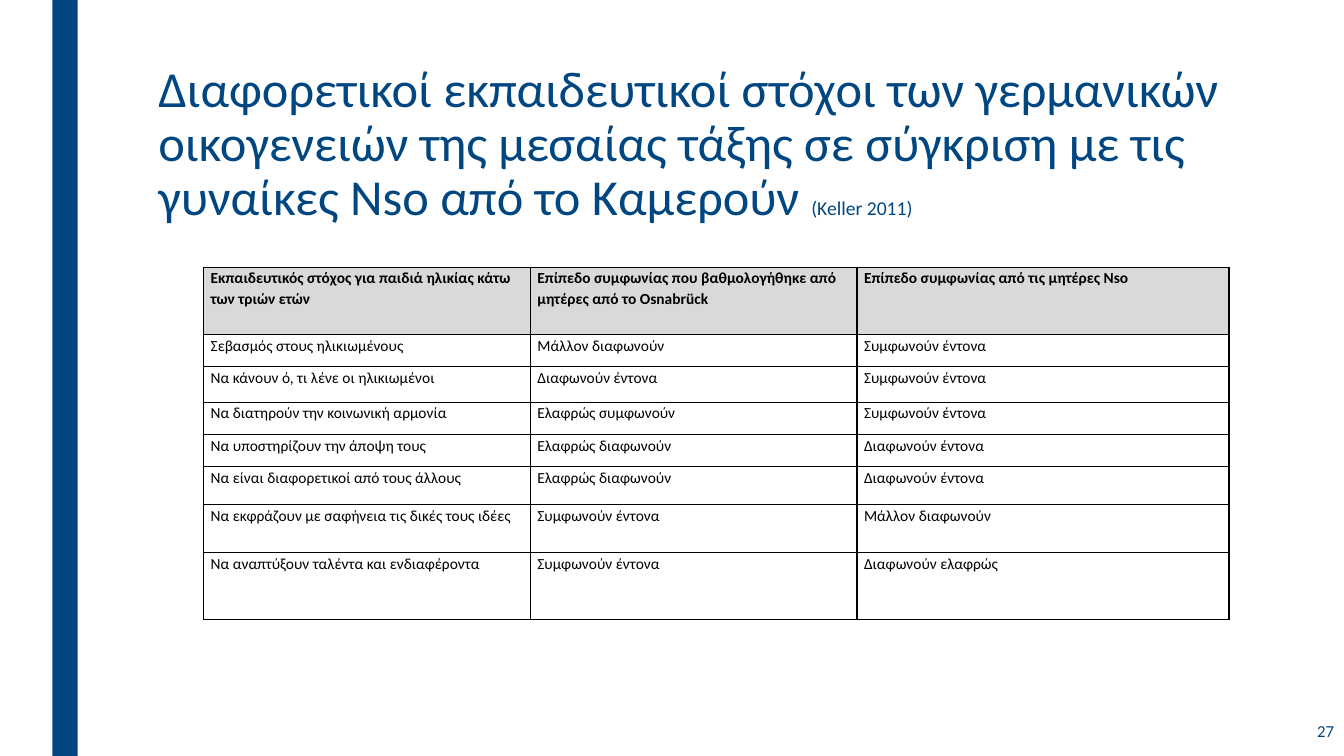
from dataclasses import dataclass

from lxml.etree import SubElement
from pptx import Presentation
from pptx.dml.color import RGBColor
from pptx.enum.shapes import MSO_SHAPE as Shape
from pptx.enum.text import MSO_ANCHOR as Anchor, MSO_AUTO_SIZE as AutoSize, PP_ALIGN as Align
from pptx.oxml.ns import qn
from pptx.util import Inches, Pt


@dataclass(frozen=True)
class Theme:
    font: str = "Calibri"
    blue: str = "004680"
    black: str = "000000"
    header_fill: str = "D9D9D9"
    title_size: int = 36
    source_size: int = 14
    number_size: int = 12
    table_size: int = 11
    table_leading: int = 15


@dataclass(frozen=True)
class Area:
    left: float
    top: float
    width: float
    height: float

    def lengths(self) -> tuple:
        return tuple(Inches(v) for v in (self.left, self.top, self.width, self.height))


@dataclass(frozen=True)
class Goal:
    name: str
    osnabrueck: str
    nso: str
    height: float

    def texts(self) -> tuple:
        return self.name, self.osnabrueck, self.nso


THEME = Theme()
BAR = Area(0.52, 0, 0.25, 7.5)
TITLE = Area(1.47, 0.58, 11.26, 1.73)
TABLE = Area(2.02, 2.65, 10.17, 3.5)
NUMBER = Area(11.58, 7.03, 1.75, 0.44)
COLUMN_WIDTHS = (3.24, 3.24, 3.69)

TITLE_TEXT = ("Διαφορετικοί εκπαιδευτικοί στόχοι των γερμανικών οικογενειών της μεσαίας "
              "τάξης σε σύγκριση με τις γυναίκες Nso από το Καμερούν ")
GOALS = (
    Goal("Εκπαιδευτικός στόχος για παιδιά ηλικίας κάτω των τριών ετών",
         "Επίπεδο συμφωνίας που βαθμολογήθηκε από μητέρες από το Osnabrück",
         "Επίπεδο συμφωνίας από τις μητέρες Nso", 0.67),
    Goal("Σεβασμός στους ηλικιωμένους", "Μάλλον διαφωνούν", "Συμφωνούν έντονα", 0.32),
    Goal("Να κάνουν ό, τι λένε οι ηλικιωμένοι", "Διαφωνούν έντονα", "Συμφωνούν έντονα", 0.35),
    Goal("Να διατηρούν την κοινωνική αρμονία", "Ελαφρώς συμφωνούν", "Συμφωνούν έντονα", 0.32),
    Goal("Να υποστηρίζουν την άποψη τους", "Ελαφρώς διαφωνούν", "Διαφωνούν έντονα", 0.32),
    Goal("Να είναι διαφορετικοί από τους άλλους", "Ελαφρώς διαφωνούν", "Διαφωνούν έντονα", 0.38),
    Goal("Να εκφράζουν με σαφήνεια τις δικές τους ιδέες", "Συμφωνούν έντονα",
         "Μάλλον διαφωνούν", 0.47),
    Goal("Να αναπτύξουν ταλέντα και ενδιαφέροντα", "Συμφωνούν έντονα", "Διαφωνούν ελαφρώς", 0.67),
)


def apply(target, formats: dict) -> None:
    for name, value in formats.items():
        setattr(target, name, value)


def add_span(para, text: str, size: int, color: str, bold: bool = False) -> None:
    span = para.add_run()
    span.text = text
    apply(span.font, {"name": THEME.font, "size": Pt(size), "bold": bold})
    span.font.color.rgb = RGBColor.from_string(color)


def add_bar(page) -> None:
    bar = page.shapes.add_shape(Shape.RECTANGLE, *BAR.lengths())
    bar.shadow.inherit = False
    bar.fill.solid()
    bar.fill.fore_color.rgb = RGBColor.from_string(THEME.blue)
    bar.line.fill.background()


def fill_title(page) -> None:
    box = page.shapes.title
    apply(box, dict(zip(("left", "top", "width", "height"), TITLE.lengths())))
    apply(box.text_frame, {"word_wrap": True, "auto_size": AutoSize.NONE,
                           "vertical_anchor": Anchor.MIDDLE})
    para = box.text_frame.paragraphs[0]
    apply(para, {"alignment": Align.LEFT, "line_spacing": 0.89})
    add_span(para, TITLE_TEXT, THEME.title_size, THEME.blue)
    add_span(para, "(Keller 2011)", THEME.source_size, THEME.blue)


def add_borders(cell) -> None:
    properties = cell._tc.get_or_add_tcPr()
    for side in ("a:lnL", "a:lnR", "a:lnT", "a:lnB"):
        line = SubElement(properties, qn(side), w=str(Pt(1)))
        fill = SubElement(line, qn("a:solidFill"))
        SubElement(fill, qn("a:srgbClr"), val=THEME.black)


def format_cell(cell, text: str, header: bool) -> None:
    add_borders(cell)
    apply(cell, {"margin_left": Inches(0.07), "margin_right": Inches(0.07),
                 "margin_top": 0, "margin_bottom": 0, "vertical_anchor": Anchor.TOP})
    if header:
        cell.fill.solid()
        cell.fill.fore_color.rgb = RGBColor.from_string(THEME.header_fill)
    else:
        cell.fill.background()
    para = cell.text_frame.paragraphs[0]
    para.line_spacing = Pt(THEME.table_leading)
    add_span(para, text, THEME.table_size, THEME.black, bold=header)


def add_goal_table(page) -> None:
    table = page.shapes.add_table(len(GOALS), len(COLUMN_WIDTHS), *TABLE.lengths()).table
    apply(table, {"first_row": True, "horz_banding": False})
    for column, width in zip(table.columns, COLUMN_WIDTHS):
        column.width = Inches(width)
    for index, (row, goal) in enumerate(zip(table.rows, GOALS)):
        row.height = Inches(goal.height)
        for cell, text in zip(row.cells, goal.texts()):
            format_cell(cell, text, header=index == 0)


def add_page_number(page) -> None:
    frame = page.shapes.add_textbox(*NUMBER.lengths()).text_frame
    apply(frame, {"word_wrap": True, "vertical_anchor": Anchor.MIDDLE})
    para = frame.paragraphs[0]
    para.alignment = Align.RIGHT
    add_span(para, "27", THEME.number_size, THEME.blue)


def main() -> None:
    deck = Presentation()
    apply(deck, {"slide_width": Inches(13.33), "slide_height": Inches(7.5)})
    page = deck.slides.add_slide(deck.slide_layouts.get_by_name("Title Only"))
    add_bar(page)
    fill_title(page)
    add_goal_table(page)
    add_page_number(page)
    deck.save("out.pptx")


if __name__ == "__main__":
    main()
